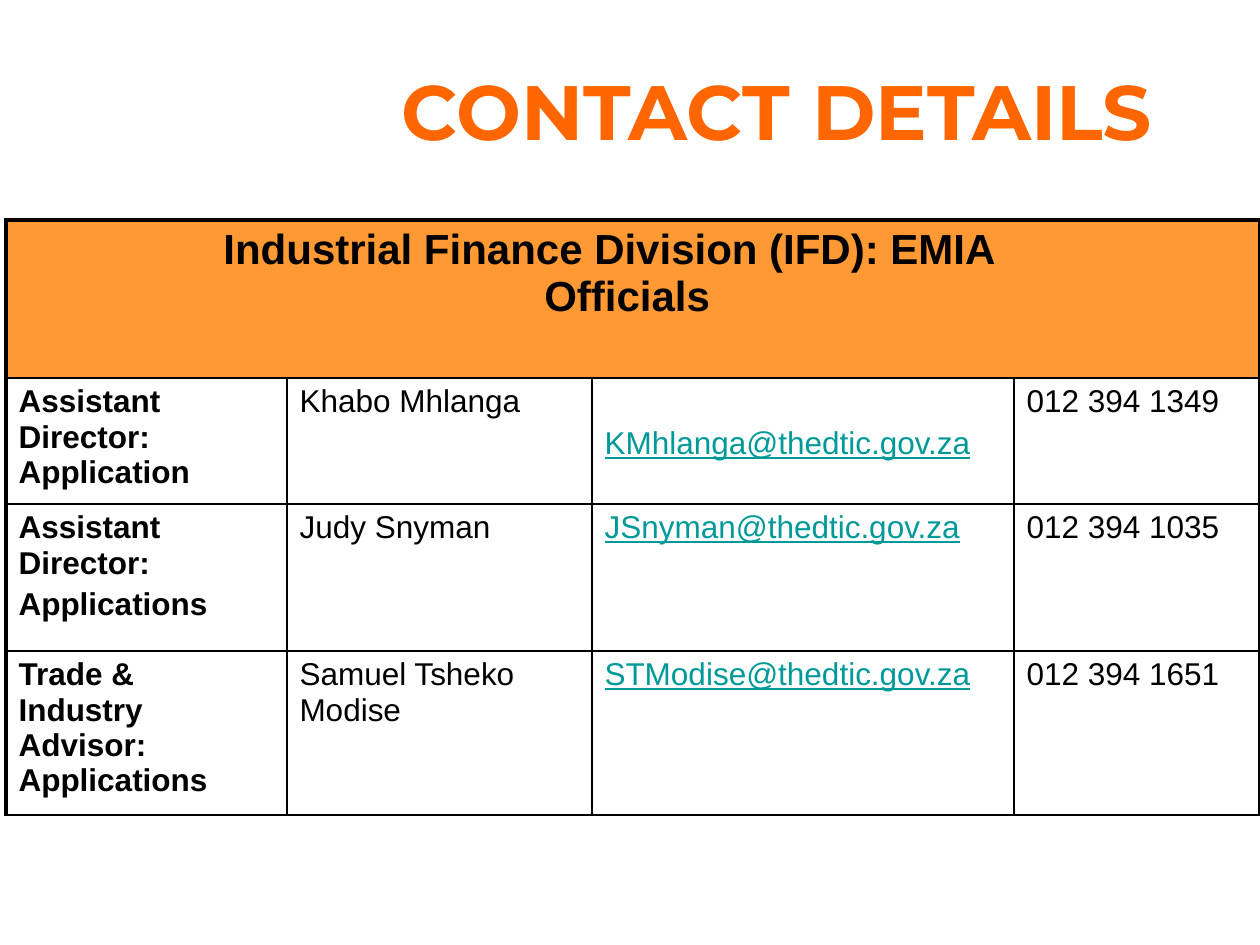
from dataclasses import dataclass

import pptx
import pptx.dml.color
import pptx.enum.text
import pptx.oxml
import pptx.oxml.ns
import pptx.util

PX_PER_INCH = 126
BLACK, ORANGE, HEADER_FILL, TEAL = "000000", "FF6600", "FF9933", "009999"
ALIGN = pptx.enum.text.PP_ALIGN
ANCHOR = pptx.enum.text.MSO_ANCHOR


@dataclass
class Contact:
    role: list[str]
    name: str
    email: str
    phone: str
    height: int
    email_drop: int = 0


CONTACTS = [
    Contact(["Assistant Director: Application"], "Khabo Mhlanga",
            "KMhlanga@thedtic.gov.za", "012 394 1349", 118, email_drop=42),
    Contact(["Assistant Director:", "Applications"], "Judy Snyman",
            "JSnyman@thedtic.gov.za", "012 394 1035", 147),
    Contact(["Trade &\vIndustry Advisor: Applications"], "Samuel Tsheko Modise",
            "STModise@thedtic.gov.za", "012 394 1651", 154),
]
COLUMN_WIDTHS = [281, 305, 422, 246]
HEADER_HEIGHT = 158


def px(length: int) -> pptx.util.Emu:
    return pptx.util.Emu(round(length * 914400 / PX_PER_INCH))


def rgb(value: str) -> pptx.dml.color.RGBColor:
    return pptx.dml.color.RGBColor.from_string(value)


def write(frame, paragraphs: list[str], *, size: int = 18, font: str = "Arial",
          color: str = BLACK, bold: bool = False, underline: bool = False,
          align=ALIGN.LEFT, gap: float = 0) -> None:
    frame.word_wrap = True
    for index, text in enumerate(paragraphs):
        paragraph = frame.paragraphs[0] if index == 0 else frame.add_paragraph()
        paragraph.text = text
        paragraph.alignment = align
        paragraph.space_before = pptx.util.Pt(gap if index else 0)
        for run in paragraph.runs:
            run.font.size = pptx.util.Pt(size)
            run.font.name = font
            run.font.bold = bold
            run.font.underline = underline
            run.font.color.rgb = rgb(color)


def set_borders(cell, **widths: float) -> None:
    """Draw black borders; widths are in points, by side: L, R, T, B."""
    properties = cell._tc.get_or_add_tcPr()
    for side, width in widths.items():
        properties.append(pptx.oxml.parse_xml(
            f'<a:ln{side} {pptx.oxml.ns.nsdecls("a")} w="{pptx.util.Pt(width)}">'
            f'<a:solidFill><a:srgbClr val="{BLACK}"/></a:solidFill></a:ln{side}>'))


def add_title(slide) -> None:
    box = slide.shapes.add_textbox(px(336), px(42), px(882), px(136))
    box.text_frame.vertical_anchor = ANCHOR.MIDDLE
    write(box.text_frame, ["CONTACT DETAILS"], size=44, font="Montserrat",
          color=ORANGE, bold=True, align=ALIGN.CENTER)


def add_contacts(slide) -> None:
    heights = [HEADER_HEIGHT] + [contact.height for contact in CONTACTS]
    table = slide.shapes.add_table(len(heights), len(COLUMN_WIDTHS), px(6), px(220),
                                   px(sum(COLUMN_WIDTHS)), px(sum(heights))).table
    table.first_row = table.horz_banding = False
    for column, width in zip(table.columns, COLUMN_WIDTHS):
        column.width = px(width)
    for row, height in zip(table.rows, heights):
        row.height = px(height)

    # Thick outer frame on the left, top and right; thin lines elsewhere
    last = len(COLUMN_WIDTHS) - 1
    for r, row in enumerate(table.rows):
        for c, cell in enumerate(row.cells):
            set_borders(cell, L=2.25 if c == 0 else 1, R=2.25 if c == last else 1,
                        T=2.25 if r == 0 else 1, B=1)
            if r == 0:
                cell.fill.solid()
                cell.fill.fore_color.rgb = rgb(HEADER_FILL)
            else:
                cell.fill.background()

    # Header across all columns
    header = table.cell(0, 0)
    header.merge(table.cell(0, last))
    set_borders_right = header._tc.tcPr.find(pptx.oxml.ns.qn("a:lnR"))
    set_borders_right.set("w", str(pptx.util.Pt(2.25)))
    write(header.text_frame, ["Industrial Finance Division (IFD): EMIA \t", "Officials "],
          size=24, bold=True, align=ALIGN.CENTER)

    # One row per official
    for r, contact in enumerate(CONTACTS, start=1):
        role, name, email, phone = (table.cell(r, c) for c in range(last + 1))
        write(role.text_frame, contact.role, bold=True, gap=3.6)
        write(name.text_frame, [contact.name])
        email.margin_top = px(6 + contact.email_drop)
        write(email.text_frame, [contact.email], color=TEAL, underline=True)
        write(phone.text_frame, [contact.phone])


def main() -> None:
    presentation = pptx.Presentation()
    presentation.slide_width, presentation.slide_height = px(1260), px(945)
    slide = presentation.slides.add_slide(presentation.slide_layouts[6])
    add_title(slide)
    add_contacts(slide)
    presentation.save("out.pptx")


if __name__ == "__main__":
    main()
